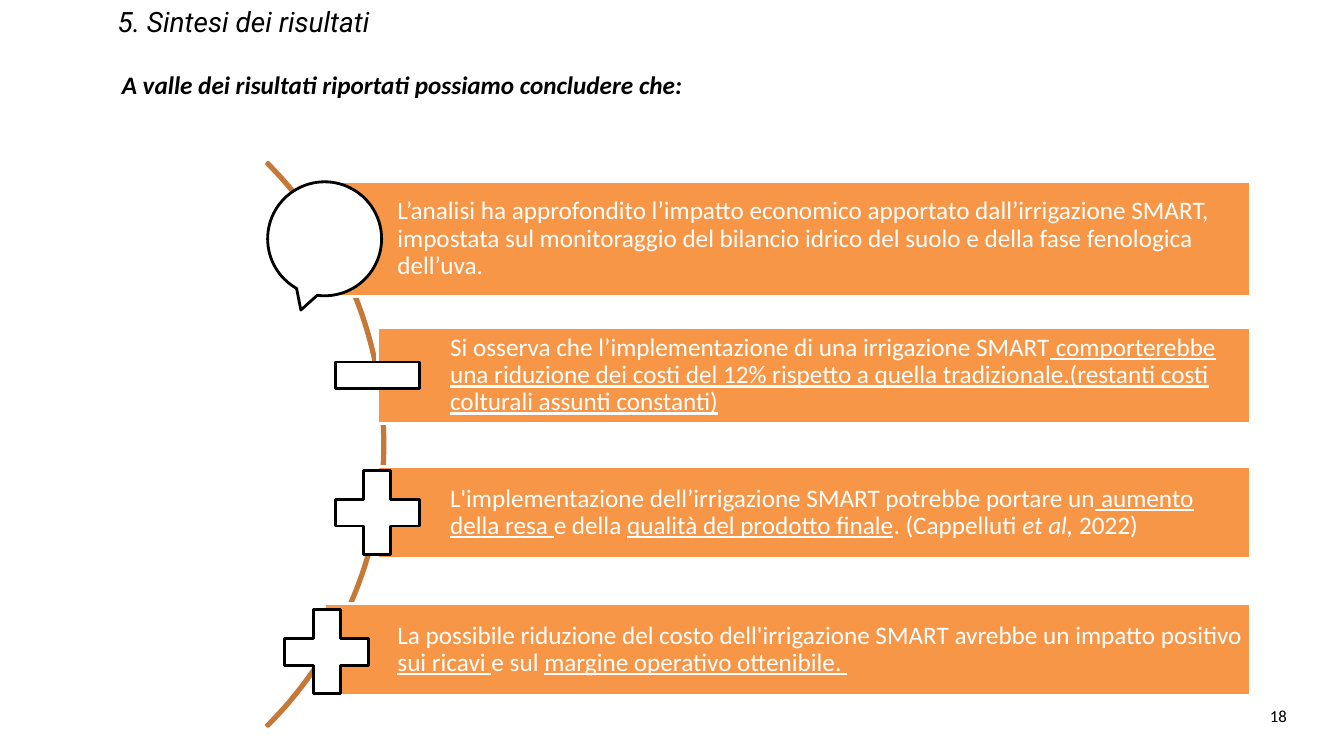
from dataclasses import dataclass

from pptx import Presentation
from pptx.dml.color import RGBColor
from pptx.enum.shapes import MSO_SHAPE as Preset
from pptx.enum.text import MSO_ANCHOR as Anchor, PP_ALIGN as Align
from pptx.shapes.autoshape import Shape
from pptx.slide import Slide
from pptx.util import Pt

COLORS = {"ink": "000000", "paper": "FFFFFF", "bar": "F79646", "arc": "C67838"}
BAR_RIGHT = 893.5
ICON_SIZE = 81.4


@dataclass
class Span:
    text: str
    underline: bool = False
    italic: bool = False


@dataclass
class Finding:
    left: float
    top: float
    height: float
    icon: Preset
    spans: list[Span]
    icon_shift: float = 0  # right and down from the middle of the bar's left side


@dataclass
class Label:
    text: str
    left: float
    top: float
    width: float
    height: float
    size: float
    font: str = "Calibri"
    bold: bool = False
    italic: bool = False
    indent: float = 0
    align: Align = Align.LEFT


FINDINGS = [
    Finding(231.9, 129.6, 82, Preset.OVAL_CALLOUT, [
        Span("L’analisi ha approfondito l’impatto economico apportato dall’irrigazione SMART, "
             "impostata sul monitoraggio del bilancio idrico del suolo e della fase fenologica "
             "dell’uva."),
    ]),
    Finding(269.5, 234, 68.4, Preset.MATH_MINUS, [
        Span("Si osserva che l’implementazione di una irrigazione SMART"),
        Span(" comporterebbe una riduzione dei costi del 12% rispetto a quella tradizionale."
             "(restanti costi colturali assunti constanti)", underline=True),
    ]),
    Finding(269.5, 333.4, 65.5, Preset.MATH_PLUS, [
        Span("L'implementazione dell’irrigazione SMART potrebbe portare un"),
        Span(" aumento della resa ", underline=True),
        Span("e della "),
        Span("qualità del prodotto finale", underline=True),
        Span(". (Cappelluti "),
        Span("et al, ", italic=True),
        Span("2022)"),
    ]),
    Finding(231.9, 431.3, 65.5, Preset.MATH_PLUS, [
        Span("La possibile riduzione del costo dell'irrigazione SMART avrebbe un impatto positivo "),
        Span("sui ricavi ", underline=True),
        Span("e sul "),
        Span("margine operativo ottenibile. ", underline=True),
    ], icon_shift=1.5),
]

LABELS = [
    Label("5. Sintesi dei risultati", 41, 0, 479.5, 31.7, 20, font="Roboto",
          italic=True, indent=36, align=Align.JUSTIFY),
    Label("A valle dei risultati riportati possiamo concludere che:",
          79.9, 46.1, 668.9, 74.9, 18, bold=True, italic=True),
    Label("18", 900, 500.4, 54, 28.8, 12),
]


def rgb(name: str) -> RGBColor:
    return RGBColor.from_string(COLORS[name])


def add_outlined(slide: Slide, preset: Preset, left: float, top: float, width: float,
                 height: float, line: str, fill: str | None = None) -> Shape:
    shape = slide.shapes.add_shape(preset, Pt(left), Pt(top), Pt(width), Pt(height))
    shape.shadow.inherit = False
    if fill:
        shape.fill.solid()
        shape.fill.fore_color.rgb = rgb(fill)
    else:
        shape.fill.background()
    shape.line.color.rgb = rgb(line)
    shape.line.width = Pt(2)
    return shape


def add_finding(slide: Slide, finding: Finding) -> None:
    bar = add_outlined(slide, Preset.RECTANGLE, finding.left, finding.top,
                       BAR_RIGHT - finding.left, finding.height, "paper", "bar")
    frame = bar.text_frame
    frame.word_wrap = True
    frame.vertical_anchor = Anchor.MIDDLE
    frame.margin_left = Pt(52)
    frame.margin_top = frame.margin_right = frame.margin_bottom = Pt(3.6)
    statement = frame.paragraphs[0]
    statement.alignment = Align.LEFT
    statement.line_spacing = 0.9
    statement.font.name = "Calibri"
    statement.font.size = Pt(18)
    statement.font.color.rgb = rgb("paper")
    for span in finding.spans:
        run = statement.add_run()
        run.text = span.text
        if span.underline:
            run.font.underline = True
        if span.italic:
            run.font.italic = True

    icon_left = finding.left - ICON_SIZE / 2 + finding.icon_shift
    icon_top = finding.top + (finding.height - ICON_SIZE) / 2 + finding.icon_shift
    add_outlined(slide, finding.icon, icon_left, icon_top, ICON_SIZE, ICON_SIZE, "ink", "paper")


def add_label(slide: Slide, label: Label) -> None:
    box = slide.shapes.add_textbox(Pt(label.left), Pt(label.top),
                                   Pt(label.width), Pt(label.height))
    box.text_frame.word_wrap = True
    line = box.text_frame.paragraphs[0]
    line.text = label.text
    line.alignment = label.align
    if label.indent:
        line._p.get_or_add_pPr().set("marL", str(Pt(label.indent)))
    line.font.name = label.font
    line.font.size = Pt(label.size)
    line.font.bold = label.bold
    line.font.italic = label.italic
    line.font.color.rgb = rgb("ink")


def main() -> None:
    deck = Presentation()
    deck.slide_width, deck.slide_height = Pt(960), Pt(540)
    slide = deck.slides.add_slide(deck.slide_layouts[6])

    # Arc behind the findings, from 315 to 45 degrees
    arc = add_outlined(slide, Preset.BLOCK_ARC, -295.2, 32.4, 570.2, 570.2, "arc")
    for index, value in enumerate((189, 27, 0.003)):
        arc.adjustments[index] = value

    # Findings with their icons
    for finding in FINDINGS:
        add_finding(slide, finding)

    # Title, lead-in and page number
    for label in LABELS:
        add_label(slide, label)

    deck.save("out.pptx")


if __name__ == "__main__":
    main()
